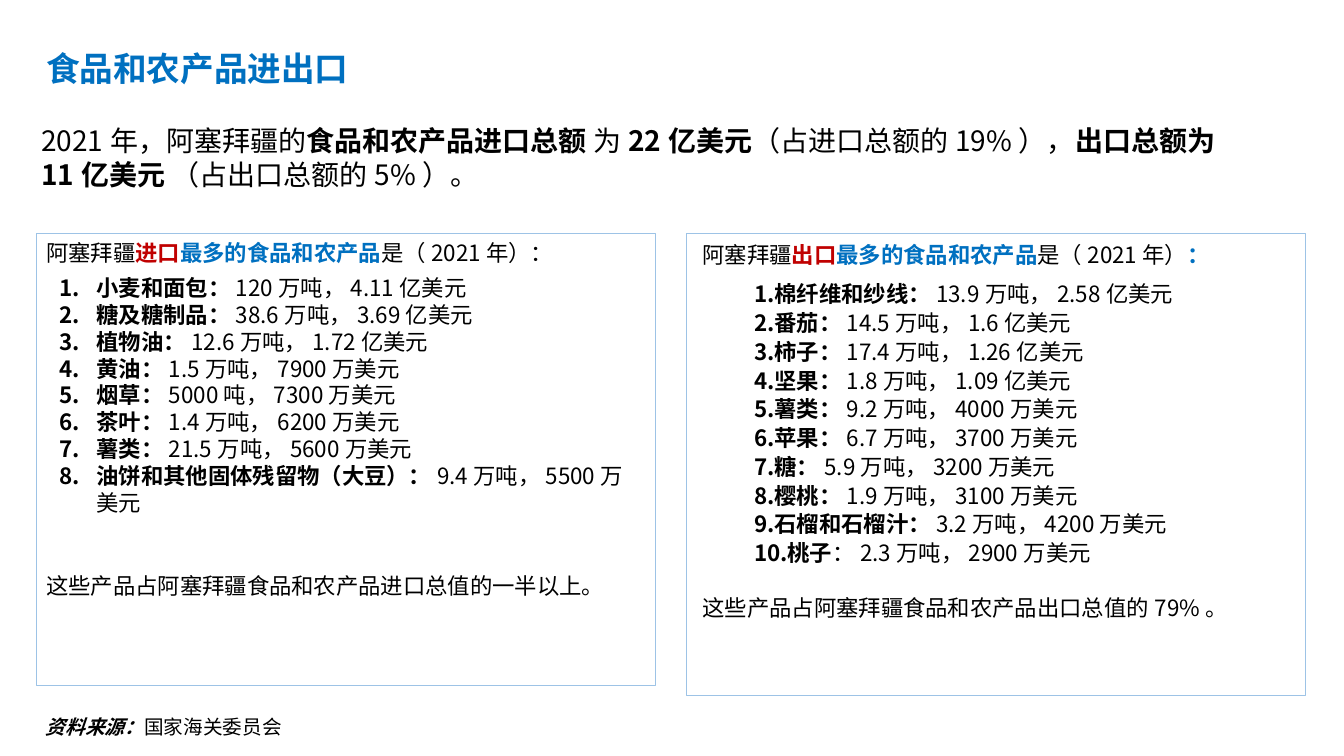
from lxml.etree import SubElement
from pptx import Presentation
from pptx.dml.color import RGBColor
from pptx.enum.text import MSO_ANCHOR, MSO_AUTO_SIZE, PP_ALIGN
from pptx.oxml.ns import qn
from pptx.util import Cm, Pt

FONT = "Noto Sans CJK SC"
BLACK = RGBColor(0x00, 0x00, 0x00)
BLUE = RGBColor(0x00, 0x70, 0xC0)
RED = RGBColor(0xC0, 0x00, 0x00)
BORDER = RGBColor(0x9D, 0xC3, 0xE6)

# Run styles: colour, bold, italic
PLAIN = (BLACK, False, False)
BOLD = (BLACK, True, False)
BOLD_ITALIC = (BLACK, True, True)
BLUE_BOLD = (BLUE, True, False)
RED_BOLD = (RED, True, False)

# Content
TITLE = [("食品和农产品进出口", BLUE_BOLD)]
SUMMARY = [
    ("2021年，阿塞拜疆的", PLAIN), ("食品和农产品进口总额 ", BOLD), ("为", PLAIN),
    ("22亿美元", BOLD), ("（占进口总额的19%），", PLAIN),
    ("出口总额为11亿美元 ", BOLD), ("（占出口总额的5%）。", PLAIN),
]
SOURCE = [("资料来源：", BOLD_ITALIC), ("国家海关委员会", PLAIN)]
IMPORTS = {
    "heading": [("阿塞拜疆", PLAIN), ("进口", RED_BOLD),
                ("最多的食品和农产品", BLUE_BOLD), ("是（2021年）：", PLAIN)],
    "products": [
        ("小麦和面包：", "120万吨，4.11亿美元"),
        ("糖及糖制品：", "38.6万吨，3.69亿美元"),
        ("植物油：", "12.6万吨，1.72亿美元"),
        ("黄油：", "1.5万吨，7900万美元"),
        ("烟草：", "5000吨，7300万美元"),
        ("茶叶：", "1.4万吨，6200万美元"),
        ("薯类：", "21.5万吨，5600万美元"),
        ("油饼和其他固体残留物（大豆）：", "9.4万吨，5500万美元"),
    ],
    "closing": [("这些产品占阿塞拜疆食品和农产品进口总值的一半以上。", PLAIN)],
    "box": (0.91, 5.89, 15.6, 11.38),
    "text_left": 0, "list_indent": (1.27, -0.94),
    "line": 1.0, "heading_gap": 6, "closing_gap": 40,
}
EXPORTS = {
    "heading": [("阿塞拜疆", PLAIN), ("出口", RED_BOLD), ("最多的食品和农产品", BLUE_BOLD),
                ("是（2021年）", PLAIN), ("：", BLUE_BOLD)],
    "products": [
        ("棉纤维和纱线：", "13.9万吨，2.58亿美元"),
        ("番茄：", "14.5万吨，1.6亿美元"),
        ("柿子：", "17.4万吨，1.26亿美元"),
        ("坚果：", "1.8万吨，1.09亿美元"),
        ("薯类：", "9.2万吨，4000万美元"),
        ("苹果：", "6.7万吨，3700万美元"),
        ("糖：", "5.9万吨，3200万美元"),
        ("樱桃：", "1.9万吨，3100万美元"),
        ("石榴和石榴汁：", "3.2万吨，4200万美元"),
        ("桃子", "：2.3万吨，2900万美元"),
    ],
    "closing": [("这些产品占阿塞拜疆食品和农产品出口总值的79%。", PLAIN)],
    "box": (17.3, 5.89, 15.6, 11.63),
    "text_left": 0.15, "list_indent": (0.33, 1.12),
    "line": 1.07, "heading_gap": 8, "closing_gap": 19,
}


def place(sp, box):
    """Move a shape to a box in cm and return its text frame."""
    sp.left, sp.top, sp.width, sp.height = [Cm(v) for v in box]
    tf = sp.text_frame
    tf.word_wrap = True
    tf.auto_size = MSO_AUTO_SIZE.NONE
    tf.vertical_anchor = MSO_ANCHOR.TOP
    return tf


def write(p, runs, size, line=1.0, before=0, after=0, indent=(0, 0), numbered=False):
    p.alignment = PP_ALIGN.LEFT
    p.line_spacing = line
    p.space_before, p.space_after = Pt(before), Pt(after)
    pPr = p._p.get_or_add_pPr()
    pPr.set("marL", str(Cm(indent[0])))
    pPr.set("indent", str(Cm(indent[1])))
    if numbered:
        SubElement(pPr, qn("a:buFont"), typeface="+mj-lt")
        SubElement(pPr, qn("a:buAutoNum"), type="arabicPeriod")
    else:
        SubElement(pPr, qn("a:buNone"))
    for text, (color, bold, italic) in runs:
        r = p.add_run()
        r.text = text
        r.font.name, r.font.size = FONT, Pt(size)
        r.font.bold, r.font.italic = bold, italic
        r.font.color.rgb = color
        SubElement(r.font._element, qn("a:ea"), typeface=FONT)


def fill_panel(sp, panel):
    """Bordered panel: heading, numbered products, closing line."""
    tf = place(sp, panel["box"])
    sp.line.color.rgb = BORDER
    sp.line.width = Pt(0.75)
    line, left = panel["line"], (panel["text_left"], 0)
    write(tf.paragraphs[0], panel["heading"], 16, line,
          after=panel["heading_gap"], indent=left)
    for name, amount in panel["products"]:
        write(tf.add_paragraph(), [(name, BOLD), (amount, PLAIN)], 16, line,
              indent=panel["list_indent"], numbered=True)
    write(tf.add_paragraph(), panel["closing"], 16, line,
          before=panel["closing_gap"], indent=left)


prs = Presentation()
prs.slide_width, prs.slide_height = Cm(33.87), Cm(19.05)
s = prs.slides.add_slide(prs.slide_layouts[3])  # title and two bodies

# Title
tf = place(s.shapes.title, (0.91, 1.07, 23.14, 1.27))
write(tf.paragraphs[0], TITLE, 24)

# Import and export panels
for index, panel in enumerate((IMPORTS, EXPORTS), start=1):
    fill_panel(s.placeholders[index], panel)

# Summary and source line
for runs, size, box in (
    (SUMMARY, 20, (0.79, 3.0, 30.23, 1.96)),
    (SOURCE, 14, (0.91, 17.88, 8.28, 0.86)),
):
    tf = place(s.shapes.add_textbox(0, 0, 0, 0), box)
    write(tf.paragraphs[0], runs, size)

prs.save("out.pptx")
